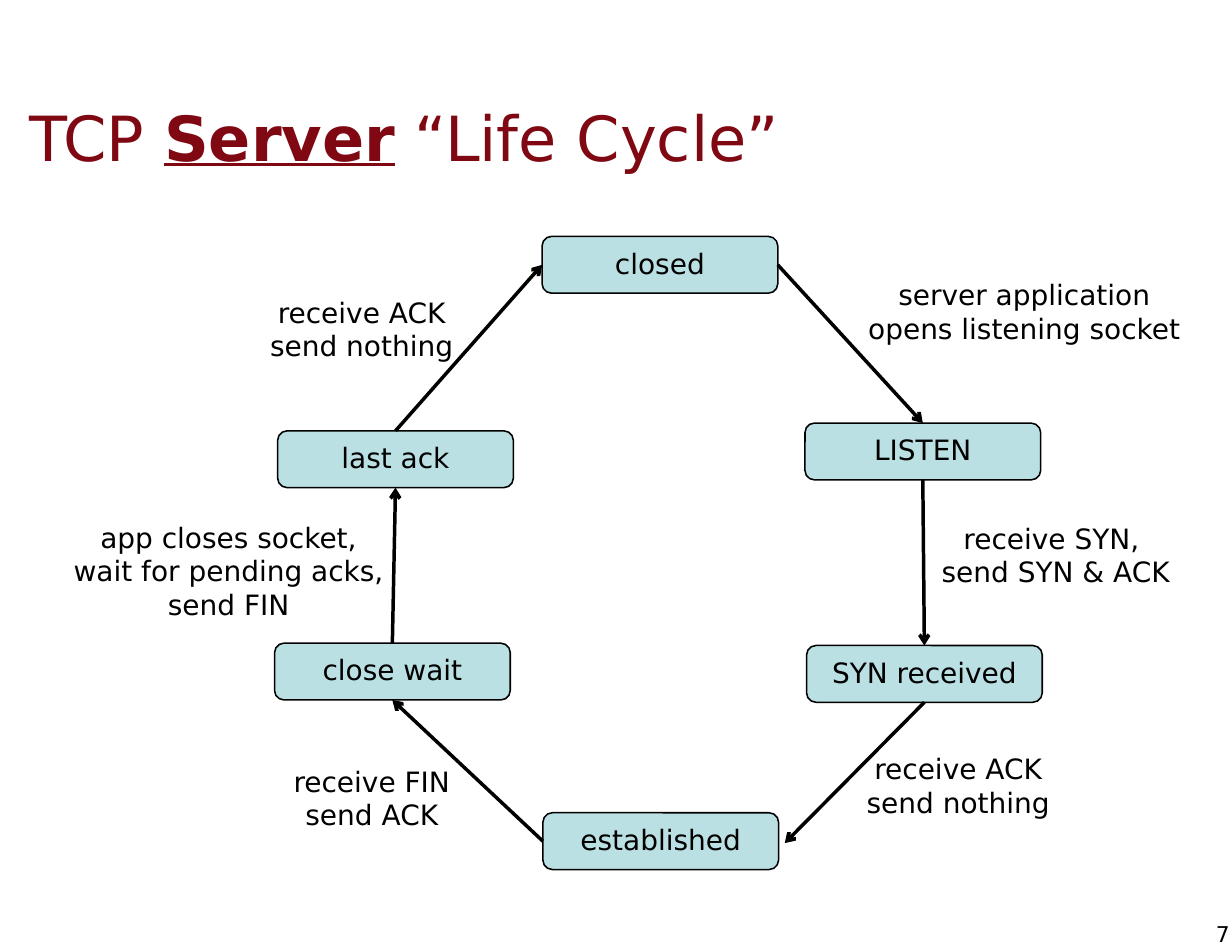
from dataclasses import dataclass

from lxml.etree import SubElement
from pptx import Presentation
from pptx.dml.color import RGBColor
from pptx.enum.shapes import MSO_CONNECTOR as Connector, MSO_SHAPE as Preset
from pptx.enum.text import MSO_ANCHOR as Anchor, MSO_AUTO_SIZE as AutoSize, PP_ALIGN as Align
from pptx.oxml.ns import qn
from pptx.util import Pt


@dataclass(frozen=True)
class Theme:
    font: str = "DejaVu Sans"
    title: RGBColor = RGBColor(0x7F, 0x08, 0x13)
    ink: RGBColor = RGBColor(0, 0, 0)
    state: RGBColor = RGBColor(0xBB, 0xE0, 0xE3)
    title_size: int = 40
    text_size: int = 18
    number_size: int = 14


theme = Theme()
TOP, LEFT, BOTTOM, RIGHT = range(4)


def format_text(text_frame, size, color, align):
    text_frame.vertical_anchor = Anchor.MIDDLE
    for paragraph in text_frame.paragraphs:
        paragraph.alignment = align
        for run in paragraph.runs:
            run.font.name = theme.font
            run.font.size = Pt(size)
            run.font.color.rgb = color


def add_text(slide, text, box, size, align):
    text_frame = slide.shapes.add_textbox(*map(Pt, box)).text_frame
    text_frame.margin_left = text_frame.margin_right = 0
    text_frame.margin_top = text_frame.margin_bottom = 0
    text_frame.word_wrap = False
    text_frame.text = text
    format_text(text_frame, size, theme.ink, align)


presentation = Presentation()
presentation.slide_width, presentation.slide_height = Pt(792), Pt(612)
slide = presentation.slides.add_slide(presentation.slide_layouts[5])

title = slide.shapes.title
title.left, title.top, title.width, title.height = map(Pt, (10.8, 50.4, 758, 75))
title_frame = title.text_frame
title_frame.auto_size = AutoSize.NONE
title_frame.margin_left = title_frame.margin_right = Pt(8)
title_frame.margin_top = title_frame.margin_bottom = Pt(4)
for text in ("TCP ", "Server", " “Life Cycle”"):
    run = title_frame.paragraphs[0].add_run()
    run.text = text
    run.font.bold = run.font.underline = text == "Server"
format_text(title_frame, theme.title_size, theme.title, Align.LEFT)

add_text(slide, "7", (772.5, 592, 18, 17), theme.number_size, Align.RIGHT)

state_positions = {
    "closed": (348.5, 152),
    "last ack": (178.5, 277),
    "established": (349, 522.5),
    "SYN received": (518.5, 415),
    "LISTEN": (517.5, 272),
    "close wait": (176.5, 413.5),
}
states = {}
for name, (left, top) in state_positions.items():
    shape = slide.shapes.add_shape(
        Preset.ROUNDED_RECTANGLE, Pt(left), Pt(top), Pt(151.5), Pt(36.5))
    shape.shadow.inherit = False
    shape.fill.solid()
    shape.fill.fore_color.rgb = theme.state
    shape.line.color.rgb = theme.ink
    shape.line.width = Pt(1)
    shape.text_frame.margin_bottom = Pt(6)
    shape.text_frame.text = name
    format_text(shape.text_frame, theme.text_size, theme.ink, Align.CENTER)
    states[name] = shape

transitions = [
    ("last ack", TOP, "closed", LEFT),
    ("close wait", TOP, "last ack", BOTTOM),
    ("established", LEFT, "close wait", BOTTOM),
    ("SYN received", BOTTOM, "established", None),
    ("LISTEN", BOTTOM, "SYN received", TOP),
    ("closed", RIGHT, "LISTEN", TOP),
]
for source, source_side, target, target_side in transitions:
    arrow = slide.shapes.add_connector(
        Connector.STRAIGHT, Pt(594), Pt(451), Pt(504.5), Pt(542))
    arrow.begin_connect(states[source], source_side)
    if target_side is not None:
        arrow.end_connect(states[target], target_side)
    arrow.line.color.rgb = theme.ink
    arrow.line.width = Pt(2.25)
    SubElement(arrow.line._get_or_add_ln(), qn("a:tailEnd"), type="arrow")
    SubElement(arrow._element.spPr, qn("a:effectLst"))

labels = [
    ("server application\vopens listening socket", (557.5, 178.5, 202, 43.5)),
    ("receive ACK\vsend nothing", (173, 189.5, 119, 43.5)),
    ("app closes socket,\nwait for pending acks,\vsend FIN", (46, 334, 202, 65.5)),
    ("receive FIN\vsend ACK", (187, 491, 104, 43.5)),
    ("receive ACK\vsend nothing", (556.5, 483, 119, 43.5)),
    ("receive SYN, \vsend SYN & ACK", (603.5, 335, 150.5, 43.5)),
]
for text, box in labels:
    add_text(slide, text, box, theme.text_size, Align.CENTER)

presentation.save("out.pptx")
